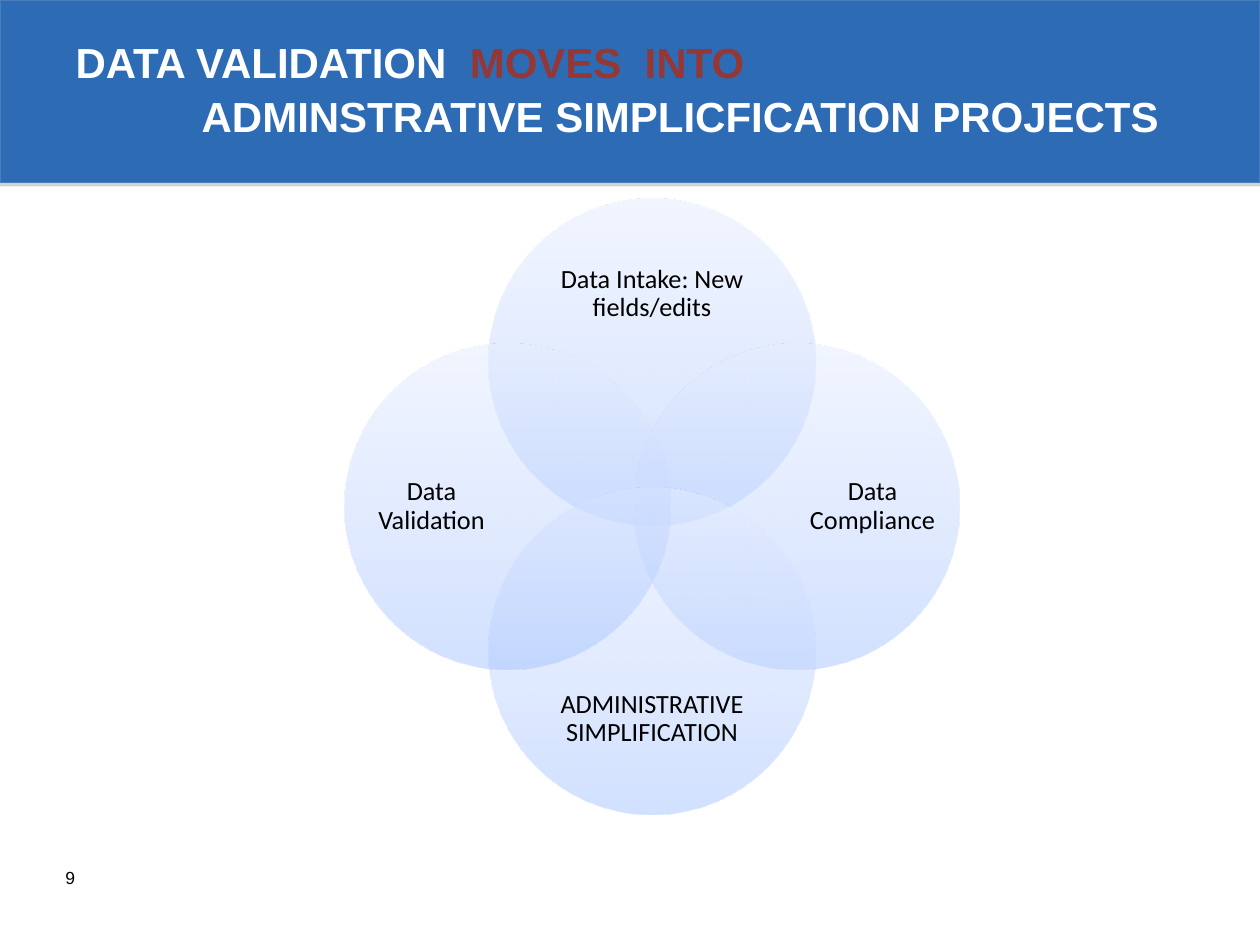
"""Build a slide with four overlapping circles around data validation."""
from pptx import Presentation
from pptx.dml.color import RGBColor
from pptx.enum.shapes import MSO_SHAPE
from pptx.enum.text import MSO_ANCHOR, MSO_AUTO_SIZE, PP_ALIGN
from pptx.oxml import parse_xml
from pptx.oxml.ns import nsdecls
from pptx.util import Pt


def style(run, size, font, color, bold=False):
    """Format one run."""
    run.font.size = Pt(size)
    run.font.name = font
    run.font.bold = bold
    run.font.color.rgb = RGBColor.from_string(color)


def gradient_xml(stops):
    """Return a half-transparent gradient that runs upwards."""
    marks = "".join(
        f'<a:gs pos="{pos * 1000}"><a:srgbClr val="{color}"><a:alpha val="50000"/></a:srgbClr></a:gs>'
        for pos, color in stops
    )
    return (f'<a:gradFill {nsdecls("a")} rotWithShape="1"><a:gsLst>{marks}</a:gsLst>'
            '<a:lin ang="16200000" scaled="0"/></a:gradFill>')


prs = Presentation()
prs.slide_width, prs.slide_height = Pt(720), Pt(540)
slide = prs.slides.add_slide(prs.slide_layouts[5])
shapes = slide.shapes

band = shapes.add_shape(MSO_SHAPE.RECTANGLE, 0, 0, Pt(720), Pt(104.4))
band.fill.solid()
band.fill.fore_color.rgb = RGBColor.from_string("2D6BB5")
band.line.color.rgb = RGBColor.from_string("4A7EBB")
band.line.width = Pt(0.75)
band.shadow.inherit = False
band._element.spPr.find("{*}effectLst").append(parse_xml(
    f'<a:outerShdw {nsdecls("a")} blurRad="0" dist="{Pt(1.8)}" dir="5400000" rotWithShape="0">'
    '<a:srgbClr val="808080"><a:alpha val="35000"/></a:srgbClr></a:outerShdw>'))
shapes._spTree.insert(2, band._element)

title = shapes.title
title.left, title.top, title.width, title.height = Pt(36), Pt(5.75), Pt(648), Pt(90)
heading = title.text_frame
heading.auto_size = MSO_AUTO_SIZE.NONE
heading.vertical_anchor = MSO_ANCHOR.MIDDLE
heading.text = "DATA VALIDATION \nADMINSTRATIVE SIMPLICFICATION PROJECTS"
first_line, second_line = heading.paragraphs
first_line.add_run().text = " MOVES  INTO"
second_line._p.get_or_add_pPr().set("marL", str(Pt(72)))
second_line.space_before = Pt(1.7)
for line in heading.paragraphs:
    line.alignment = PP_ALIGN.LEFT
    for run in line.runs:
        style(run, 24, "Arial", "FFFFFF", True)
first_line.runs[1].font.color.rgb = RGBColor.from_string("953735")

page_number = shapes.add_textbox(Pt(30.25), Pt(491.75), Pt(167.75), Pt(28.75))
page_number.text_frame.word_wrap = True
page_number.text_frame.text = "9"
style(page_number.text_frame.paragraphs[0].runs[0], 10, "Arial", "000000")

center_x, center_y = 372.6, 289.5
diameter, circle_step = 186.5, 82.6
circle_gradient = gradient_xml([(0, "A4C4FF"), (35, "BFD4FF"), (100, "E6EEFF")])
topics = [
    ("Data Intake: New fields/edits", 0, -1),
    ("Data Compliance", 1, 0),
    ("ADMINISTRATIVE SIMPLIFICATION", 0, 1),
    ("Data Validation", -1, 0),
]
for topic, dx, dy in topics:
    circle = shapes.add_shape(
        MSO_SHAPE.OVAL,
        Pt(center_x + dx * circle_step - diameter / 2),
        Pt(center_y + dy * circle_step - diameter / 2),
        Pt(diameter), Pt(diameter))
    circle.line.fill.background()
    circle.shadow.inherit = False
    circle._element.spPr.insert(2, parse_xml(circle_gradient))

    width, height = (72, 144) if dx else (144, 59)
    label = shapes.add_textbox(
        Pt(center_x + dx * 126 - width / 2),
        Pt(center_y + dy * 121.5 - height / 2),
        Pt(width), Pt(height))
    frame = label.text_frame
    frame.word_wrap = True
    frame.vertical_anchor = MSO_ANCHOR.MIDDLE
    frame.margin_left = frame.margin_right = frame.margin_top = frame.margin_bottom = 0
    frame.text = topic
    frame.paragraphs[0].alignment = PP_ALIGN.CENTER
    frame.paragraphs[0].line_spacing = 0.9
    style(frame.paragraphs[0].runs[0], 15, "Calibri", "000000")

prs.save("out.pptx")
